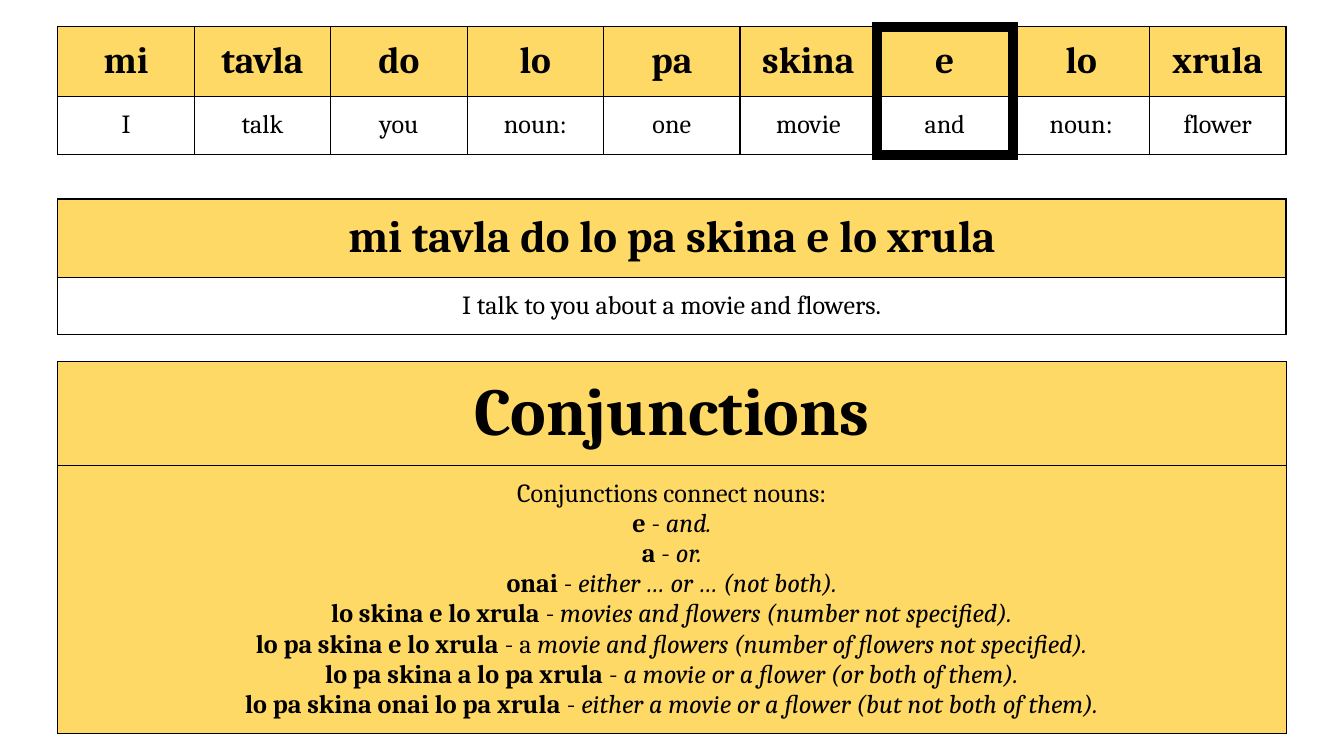
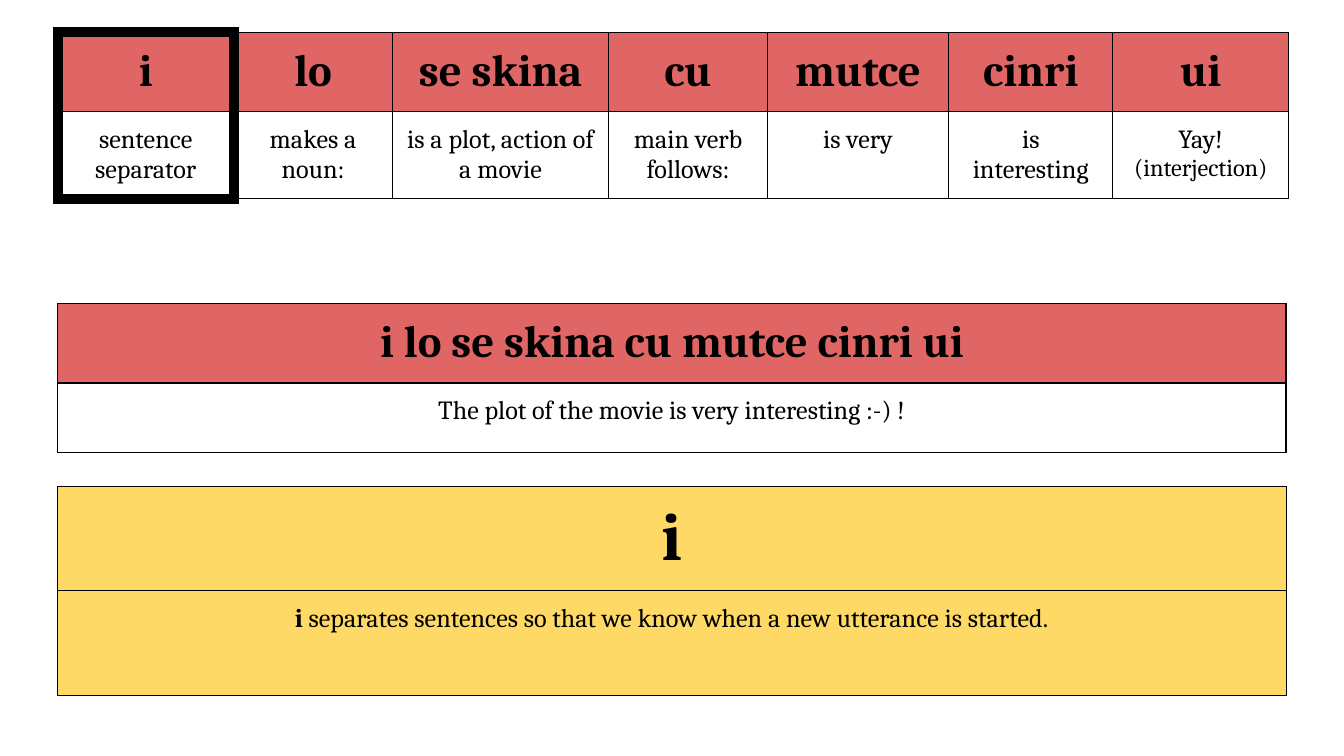
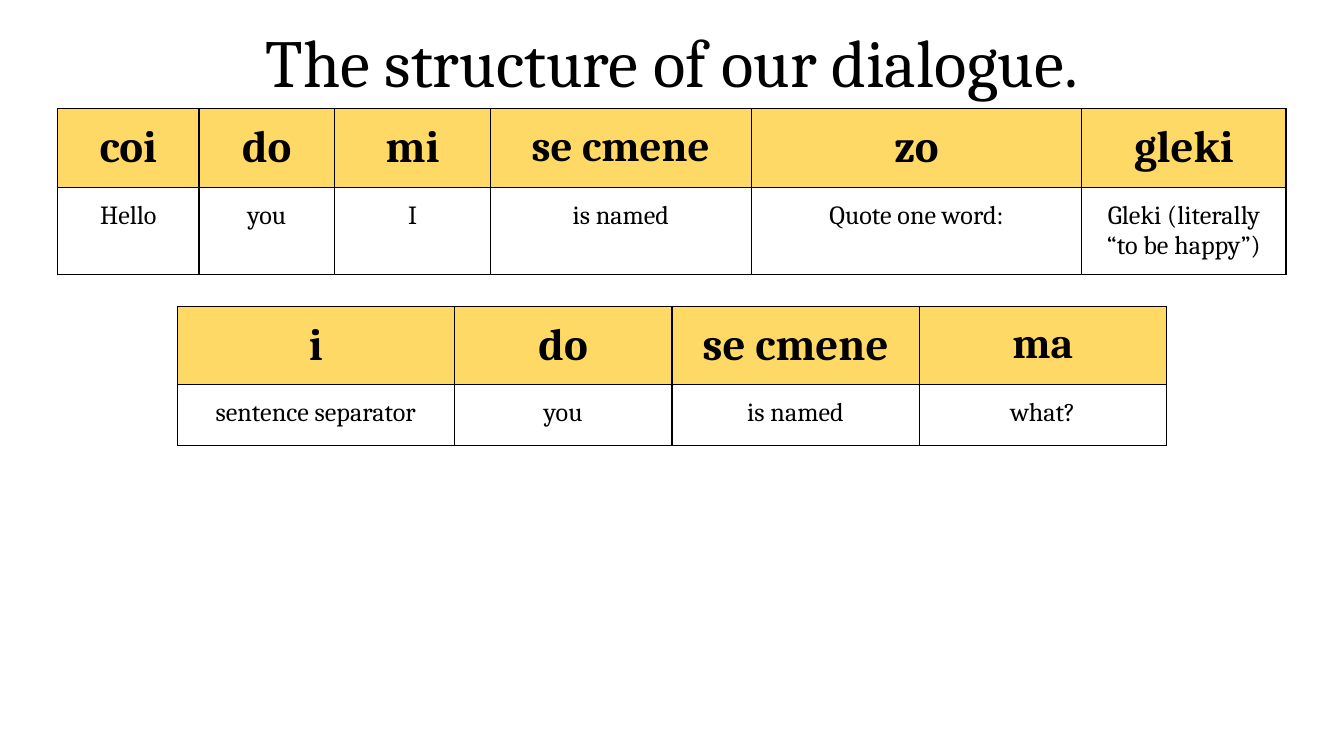
from pptx import Presentation
from pptx.dml.color import RGBColor
from pptx.enum.text import MSO_ANCHOR, MSO_AUTO_SIZE, PP_ALIGN
from pptx.oxml.ns import qn
from pptx.util import Inches, Pt
from lxml.etree import SubElement

# Shared look
FONT = "Cambria"
BLACK, WHITE, YELLOW, RED = "000000", "FFFFFF", "FFD966", "E06666"
THIN, THICK = 0.75, 6
LEFT, FULL_WIDTH, INSET = 0.43, 9.14, 0.1
GLOSS_SIZE = 14


def color(value):
    return RGBColor.from_string(value)


def format_run(run, size, bold=False, italic=False):
    font = run.font
    font.name, font.size = FONT, Pt(size)
    font.bold, font.italic = bold, italic
    font.color.rgb = color(BLACK)


def set_insets(target):
    target.margin_left = target.margin_right = Inches(INSET)
    target.margin_top = target.margin_bottom = Inches(INSET)


# Cell parts
def set_borders(cell, widths):
    """Draw the cell's sides; widths are in the order left, right, top, bottom."""
    properties = cell._tc.get_or_add_tcPr()
    for side, width in zip("LRTB", widths):
        line = SubElement(properties, qn(f"a:ln{side}"), w=str(Pt(width)))
        fill = SubElement(line, qn("a:solidFill"))
        SubElement(fill, qn("a:srgbClr"), val=BLACK)


def border_widths(row, column, last_row, marked):
    """Thin lines, with a thick frame around the marked column."""
    inside = column == marked
    thick_sides = (
        inside or column - 1 == marked,
        inside or column + 1 == marked,
        inside and row == 0,
        inside and row == last_row,
    )
    return [THICK if thick else THIN for thick in thick_sides]


def write_cell(cell, text, size, bold):
    cell.text_frame.text = text
    for para in cell.text_frame.paragraphs:
        para.alignment = PP_ALIGN.CENTER
        for run in para.runs:
            format_run(run, size, bold)


def write_rule(cell, lines):
    """Each line holds a bold term, a plain link and an italic meaning."""
    frame = cell.text_frame
    for number, line in enumerate(lines):
        para = frame.add_paragraph() if number else frame.paragraphs[0]
        para.alignment = PP_ALIGN.CENTER
        for place, text in enumerate(line):
            if text:
                span = para.add_run()
                span.text = text
                format_run(span, GLOSS_SIZE, bold=place == 0, italic=place == 2)


def resize_run(cell, size, number=0):
    cell.text_frame.paragraphs[0].runs[number].font.size = Pt(size)


# Tables
def add_grid(page, left, top, widths, heights, fills, marked=None):
    frame = page.shapes.add_table(
        len(heights), len(widths), Inches(left), Inches(top),
        Inches(sum(widths)), Inches(sum(heights)))
    table = frame.table
    table.first_row = table.horz_banding = False
    for column, width in zip(table.columns, widths):
        column.width = Inches(width)
    for r, (height, fill) in enumerate(zip(heights, fills)):
        table.rows[r].height = Inches(height)
        for c in range(len(widths)):
            cell = table.cell(r, c)
            set_insets(cell)
            set_borders(cell, border_widths(r, c, len(heights) - 1, marked))
            cell.fill.solid()
            cell.fill.fore_color.rgb = color(fill)
    return table


def add_glossary(page, left, top, widths, heights, entries, fill=YELLOW,
                 size=24, marked=None):
    """Words in the upper row, their meanings below."""
    table = add_grid(page, left, top, widths, heights, (fill, WHITE), marked)
    for c, (word, meaning) in enumerate(entries):
        write_cell(table.cell(0, c), word, size, True)
        write_cell(table.cell(1, c), meaning, GLOSS_SIZE, False)
    return table


def add_panel(page, top, heights, columns, fills, heading, size):
    """A heading over one wide cell; returns the lower cell."""
    widths = [FULL_WIDTH / columns] * columns
    table = add_grid(page, LEFT, top, widths, heights, fills)
    for r in range(2):
        table.cell(r, 0).merge(table.cell(r, columns - 1))
    write_cell(table.cell(0, 0), heading, size, True)
    return table.cell(1, 0)


def add_sentence(page, top, heights, fill, sentence, translation):
    cell = add_panel(page, top, heights, 7, (fill, WHITE), sentence, 24)
    write_cell(cell, translation, GLOSS_SIZE, False)


def add_rule(page, top, heights, heading, lines):
    cell = add_panel(page, top, heights, 6, (YELLOW, YELLOW), heading, 36)
    write_rule(cell, lines)


def set_title(page, text):
    title = page.shapes.title
    title.left, title.top = Inches(1.41), Inches(0.05)
    title.width, title.height = Inches(7.18), Inches(0.5)
    frame = title.text_frame
    frame.text = text
    frame.word_wrap = True
    frame.auto_size = MSO_AUTO_SIZE.NONE
    frame.vertical_anchor = MSO_ANCHOR.TOP
    set_insets(frame)
    para = frame.paragraphs[0]
    para.alignment = PP_ALIGN.CENTER
    format_run(para.runs[0], 36)


# Slides
def build_conjunctions(page):
    add_rule(page, 2.69, (0.65, 0.9), "Conjunctions", [
        ("", "Conjunctions connect nouns:"),
        ("e", " - ", "and."),
        ("a", " - ", "or."),
        ("onai", " - ", "either … or … (not both)."),
        ("lo skina e lo xrula", " - ",
         "movies and flowers (number not specified)."),
        ("lo pa skina e lo xrula", " - a ",
         "movie and flowers (number of flowers not specified)."),
        ("lo pa skina a lo pa xrula", " - ",
         "a movie or a flower (or both of them)."),
        ("lo pa skina onai lo pa xrula", " - ",
         "either a movie or a flower (but not both of them)."),
    ])
    entries = [
        ("mi", "I"), ("tavla", "talk"), ("do", "you"), ("lo", "noun:"),
        ("pa", "one"), ("skina", "movie"), ("e", "and"), ("lo", "noun:"),
        ("xrula", "flower"),
    ]
    widths = [FULL_WIDTH / len(entries)] * len(entries)
    add_glossary(page, LEFT, 0.2, widths, (0.42, 0.43), entries,
                 size=20, marked=6)
    add_sentence(page, 1.48, (0.42, 0.42), YELLOW,
                 "mi tavla do lo pa skina e lo xrula",
                 "I talk to you about a movie and flowers.")


def build_separator(page):
    add_rule(page, 3.62, (0.29, 0.78), "i", [
        ("i", " separates sentences so that we know when a new utterance"
              " is started."),
    ])
    glossary = add_glossary(
        page, LEFT, 0.24, (1.31, 1.18, 1.61, 1.18, 1.35, 1.22, 1.31),
        (0.59, 0.52), [
            ("i", "sentence separator"), ("lo", "makes a noun:"),
            ("se skina", "is a plot, action of a movie"),
            ("cu", "main verb follows:"), ("mutce", "is very"),
            ("cinri", "is interesting"), ("ui", "Yay!\v(interjection)"),
        ], fill=RED, marked=0)
    resize_run(glossary.cell(1, 6), 13, number=1)
    add_sentence(page, 2.26, (0.59, 0.52), RED,
                 "i lo se skina cu mutce cinri ui",
                 "The plot of the movie is very interesting :-) !")


def build_dialogue(page):
    greeting = add_glossary(
        page, LEFT, 0.81, (1.05, 1.01, 1.16, 1.94, 2.46, 1.52),
        (0.39, 0.42), [
            ("coi", "Hello"), ("do", "you"), ("mi", "I"),
            ("se cmene", "is named"), ("zo", "Quote one word:"),
            ("gleki", "Gleki (literally\n“to be happy”)"),
        ])
    resize_run(greeting.cell(0, 3), 23)
    set_title(page, "The structure of our dialogue.")
    question = add_glossary(
        page, 1.32, 2.28, (2.06, 1.62, 1.84, 1.84), (0.55, 0.45), [
            ("i", "sentence separator"), ("do", "you"),
            ("se cmene", "is named"), ("ma", "what?"),
        ])
    resize_run(question.cell(0, 3), 23)


def main():
    deck = Presentation()
    # Widescreen, 16 to 9
    deck.slide_width = Inches(10)
    deck.slide_height = deck.slide_width * 9 // 16
    title_only, blank = deck.slide_layouts[5], deck.slide_layouts[6]
    build_conjunctions(deck.slides.add_slide(blank))
    build_separator(deck.slides.add_slide(blank))
    build_dialogue(deck.slides.add_slide(title_only))
    deck.save("out.pptx")


if __name__ == "__main__":
    main()
